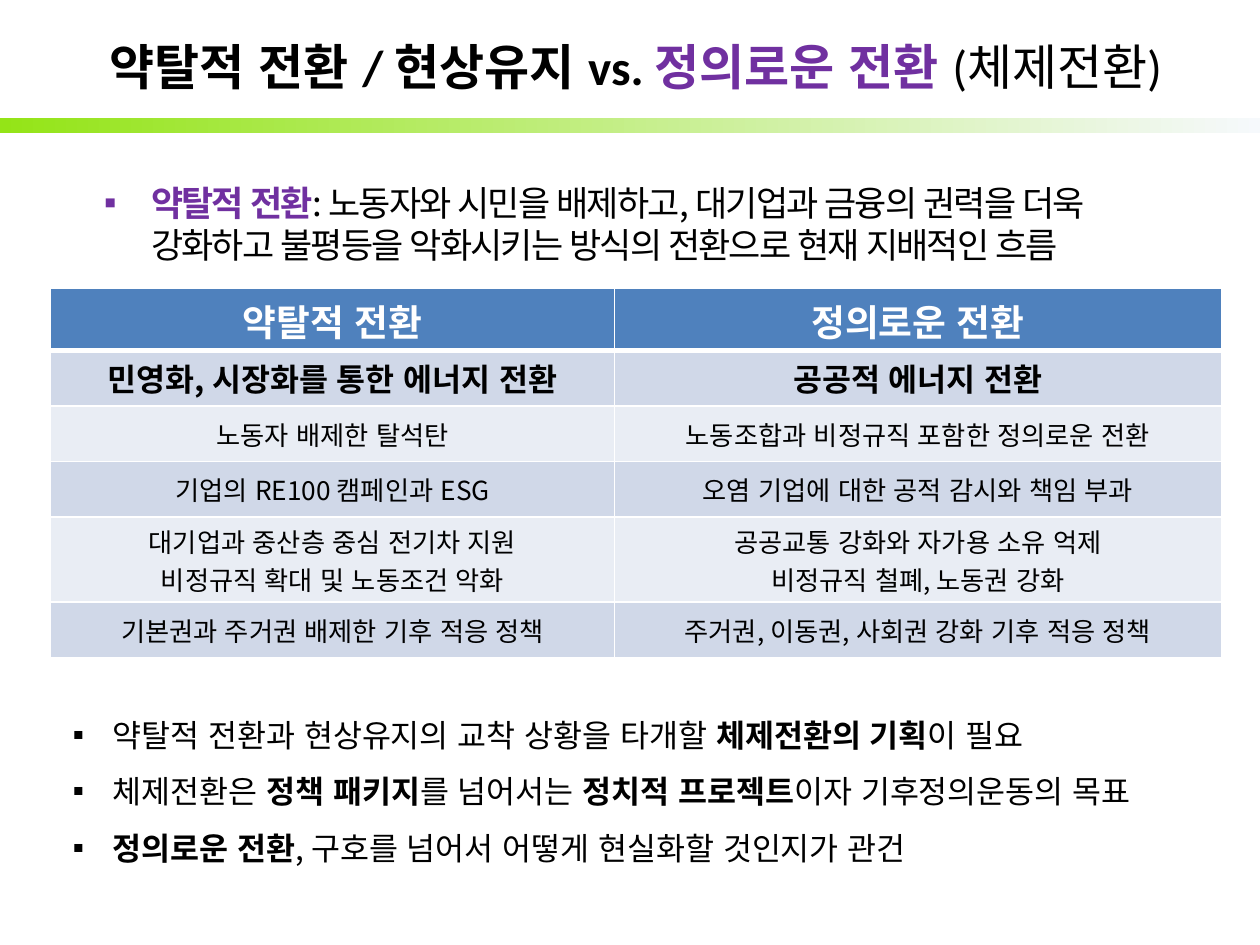
from dataclasses import dataclass

from lxml.etree import SubElement
from pptx import Presentation
from pptx.dml.color import RGBColor
from pptx.enum.lang import MSO_LANGUAGE_ID
from pptx.enum.shapes import MSO_SHAPE
from pptx.enum.text import MSO_ANCHOR, PP_ALIGN
from pptx.oxml.ns import qn
from pptx.util import Cm, Pt

KOREAN_FONT, LATIN_FONT = "Noto Sans CJK KR", "Calibri"
BLACK, WHITE, PURPLE = "000000", "FFFFFF", "7030A0"
HEADER_FILL, BAND_FILLS = "4F81BD", ("E9EDF4", "D0D8E8")


@dataclass
class Span:
    text: str
    bold: bool = False
    color: str = BLACK


@dataclass
class Style:
    size: float
    font: str = KOREAN_FONT
    align: PP_ALIGN = PP_ALIGN.LEFT
    indent: float = 0
    line_spacing: float = 1.0
    space_before: float = 0
    tracking: float = 0
    bullet_color: str = BLACK


@dataclass
class Row:
    left: list[str]
    right: list[str]
    height: float = 1.12
    size: float = 15
    bold: bool = False


TITLE = [
    Span("약탈적 전환 / 현상유지 vs. ", True),
    Span("정의로운 전환 ", True, PURPLE),
    Span("(체제전환)"),
]
DEFINITION = [
    Span("약탈적 전환", True, PURPLE),
    Span(": 노동자와 시민을 배제하고, 대기업과 금융의 권력을 더욱 강화하고 "
         "불평등을 악화시키는 방식의 전환으로 현재 지배적인 흐름"),
]
ROWS = [
    Row(["약탈적 전환"], ["정의로운 전환"], 1.24, 21, True),
    Row(["민영화, 시장화를 통한 에너지 전환"], ["공공적 에너지 전환"], size=18, bold=True),
    Row(["노동자 배제한 탈석탄"], ["노동조합과 비정규직 포함한 정의로운 전환"]),
    Row(["기업의 RE100 캠페인과 ESG"], ["오염 기업에 대한 공적 감시와 책임 부과"]),
    Row(["대기업과 중산층 중심 전기차 지원", "비정규직 확대 및 노동조건 악화"],
        ["공공교통 강화와 자가용 소유 억제", "비정규직 철폐, 노동권 강화"], 1.72),
    Row(["기본권과 주거권 배제한 기후 적응 정책"],
        ["주거권, 이동권, 사회권 강화 기후 적응 정책"]),
]
CONCLUSIONS = [
    [Span("약탈적 전환과 현상유지의 교착 상황을 타개할 "), Span("체제전환의 기획", True),
     Span("이 필요")],
    [Span("체제전환은 "), Span("정책 패키지", True), Span("를 넘어서는 "),
     Span("정치적 프로젝트", True), Span("이자 기후정의운동의 목표")],
    [Span("정의로운 전환", True), Span(", 구호를 넘어서 어떻게 현실화할 것인지가 관건")],
]


def rgb(color: str) -> RGBColor:
    return RGBColor.from_string(color)


def add_bullet(para, style: Style) -> None:
    properties = para._p.get_or_add_pPr()
    properties.set("marL", str(Cm(style.indent)))
    properties.set("indent", str(-Cm(style.indent)))
    color = SubElement(properties, qn("a:buClr"))
    SubElement(color, qn("a:srgbClr"), val=style.bullet_color)
    SubElement(properties, qn("a:buFont"), typeface=LATIN_FONT)
    SubElement(properties, qn("a:buChar"), char="▪")


def write_paragraphs(frame, paragraphs: list[list[Span]], style: Style) -> None:
    frame.word_wrap = True
    for index, spans in enumerate(paragraphs):
        para = frame.paragraphs[0] if index == 0 else frame.add_paragraph()
        para.alignment = style.align
        para.line_spacing = style.line_spacing
        para.space_before = Pt(style.space_before)
        if style.indent:
            add_bullet(para, style)
        para.font.size = Pt(style.size)
        para.font.name = style.font
        SubElement(para.font._rPr, qn("a:ea"), typeface=KOREAN_FONT)
        for span in spans:
            run = para.add_run()
            run.text = span.text
            run.font.bold = span.bold
            run.font.color.rgb = rgb(span.color)
            run.font.language_id = MSO_LANGUAGE_ID.KOREAN
            if style.tracking:
                run.font._rPr.set("spc", str(round(style.tracking * 100)))


def add_text(page, left: float, top: float, width: float, height: float,
             paragraphs: list[list[Span]], style: Style, anchor=MSO_ANCHOR.TOP) -> None:
    box = page.shapes.add_textbox(Cm(left), Cm(top), Cm(width), Cm(height))
    box.text_frame.vertical_anchor = anchor
    write_paragraphs(box.text_frame, paragraphs, style)


def add_borders(cell, top: float, bottom: float) -> None:
    properties = cell._tc.get_or_add_tcPr()
    for side, width in (("L", 1), ("R", 1), ("T", top), ("B", bottom)):
        line = SubElement(properties, qn(f"a:ln{side}"), w=str(Pt(width)))
        SubElement(SubElement(line, qn("a:solidFill")), qn("a:srgbClr"), val=WHITE)


def add_comparison(page) -> None:
    total = sum(row.height for row in ROWS)
    frame = page.shapes.add_table(len(ROWS), 2, Cm(1.02), Cm(5.82), Cm(23.6), Cm(total))
    table = frame.table
    for column, width in zip(table.columns, (11.37, 12.23)):
        column.width = Cm(width)
    for index, row in enumerate(ROWS):
        table.rows[index].height = Cm(row.height)
        header = index == 0
        for column, lines in enumerate((row.left, row.right)):
            cell = table.cell(index, column)
            cell.vertical_anchor = MSO_ANCHOR.MIDDLE
            cell.margin_left = cell.margin_right = Cm(0.18)
            cell.margin_top = cell.margin_bottom = Cm(0.1)
            add_borders(cell, 3 if index == 1 else 1, 3 if header else 1)
            cell.fill.solid()
            cell.fill.fore_color.rgb = rgb(HEADER_FILL if header else BAND_FILLS[index % 2])
            color = WHITE if header else BLACK
            write_paragraphs(cell.text_frame, [[Span(line, row.bold, color)] for line in lines],
                             Style(row.size, align=PP_ALIGN.CENTER))


def add_title_band(page) -> None:
    band = page.shapes.add_shape(MSO_SHAPE.RECTANGLE, 0, Cm(2.38), Cm(25.4), Cm(0.3))
    band.shadow.inherit = False
    band.line.fill.background()
    band.fill.gradient()
    band.fill.gradient_angle = 180
    for stop, color in zip(band.fill.gradient_stops, ("F6F9FC", "94E417")):
        stop.color.rgb = rgb(color)


def main() -> None:
    deck = Presentation()
    deck.slide_width, deck.slide_height = Cm(25.4), Cm(19.05)
    page = deck.slides.add_slide(deck.slide_layouts[6])
    add_title_band(page)
    add_text(page, 1.02, 0.53, 23.6, 1.6, [TITLE],
             Style(28, LATIN_FONT, PP_ALIGN.CENTER), MSO_ANCHOR.MIDDLE)
    add_text(page, 1.85, 3.53, 21.9, 2.44, [DEFINITION],
             Style(20, indent=0.95, space_before=4, tracking=-1.1, bullet_color=PURPLE))
    add_comparison(page)
    add_text(page, 1.22, 13.92, 23.32, 3.6, CONCLUSIONS,
             Style(18, indent=0.8, line_spacing=1.5))
    deck.save("out.pptx")


if __name__ == "__main__":
    main()
